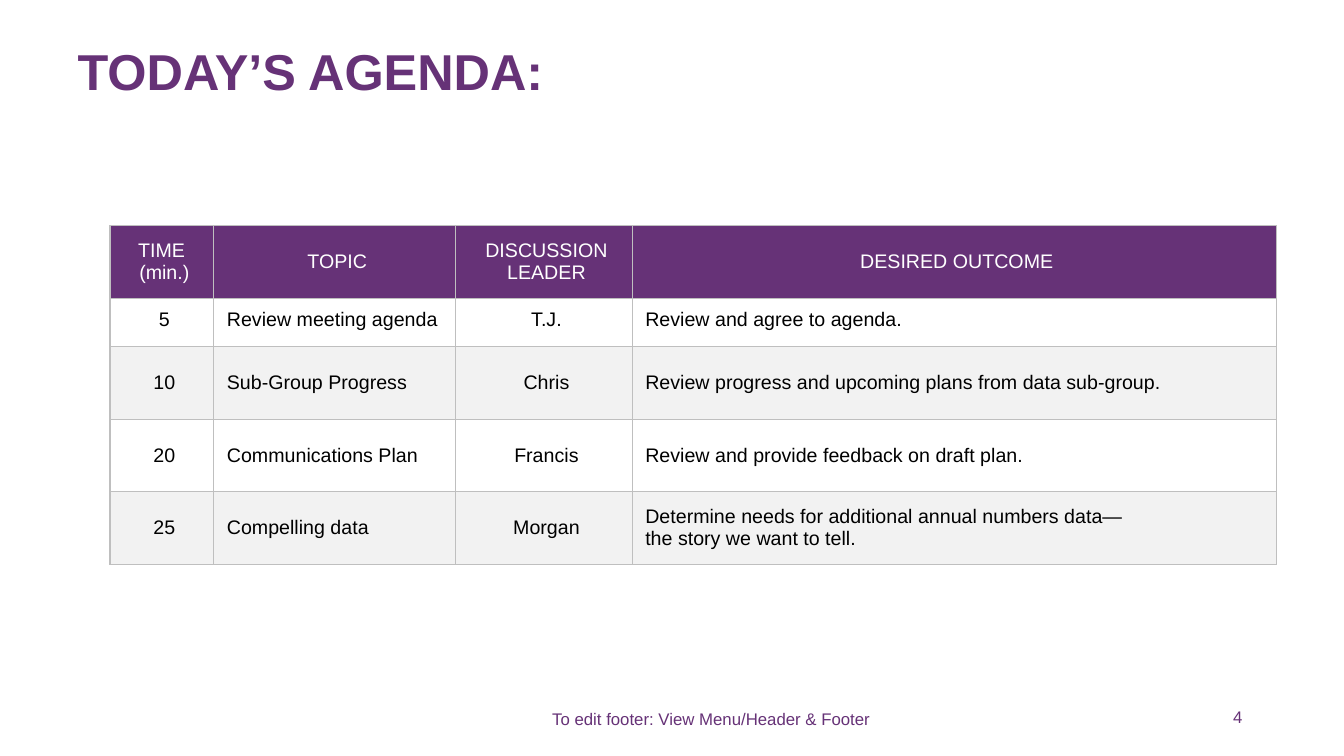
import pptx
import pptx.util
import pptx.dml.color
import pptx.enum.text
import pptx.oxml.ns
from dataclasses import dataclass
from lxml import etree

ALIGN = pptx.enum.text.PP_ALIGN
ANCHOR = pptx.enum.text.MSO_ANCHOR
qn = pptx.oxml.ns.qn


@dataclass(frozen=True)
class Theme:
    """Colours and type of the slide."""
    font: str = "Arial"
    purple: str = "663277"
    white: str = "FFFFFF"
    black: str = "000000"
    band: str = "F2F2F2"
    border: str = "BFBFBF"
    title_size: int = 36
    table_size: int = 14
    footer_size: int = 12


THEME = Theme()
COLUMN_WIDTHS = [103, 240, 175, 639]
ROW_HEIGHTS = [72, 48, 72, 72, 72]
AGENDA = [
    ["TIME \n(min.)", "TOPIC", "DISCUSSION\nLEADER", "DESIRED OUTCOME"],
    ["5", "Review meeting agenda", "T.J.", "Review and agree to agenda."],
    ["10", "Sub-Group Progress", "Chris",
     "Review progress and upcoming plans from data sub-group."],
    ["20", "Communications Plan", "Francis", "Review and provide feedback on draft plan."],
    ["25", "Compelling data", "Morgan",
     "Determine needs for additional annual numbers data—\vthe story we want to tell."],
]


def px(length):
    """Turn px, 100 to the inch, into EMU."""
    return pptx.util.Emu(length * 9144)


def color(value):
    """Return the colour object of a hex string."""
    return pptx.dml.color.RGBColor.from_string(value)


def write_text(frame, text, *, size, fill, align=ALIGN.LEFT, bold=False, line_spacing=None):
    """Write one paragraph per line of text, with one format."""
    frame.text = ""
    for index, line in enumerate(text.split("\n")):
        paragraph = frame.add_paragraph() if index else frame.paragraphs[0]
        paragraph.text = line
        paragraph.alignment = align
        paragraph.line_spacing = line_spacing
        for run in paragraph.runs:
            run.font.name = THEME.font
            run.font.size = pptx.util.Pt(size)
            run.font.bold = bold
            run.font.color.rgb = color(fill)
        for line_break in paragraph._p.findall(qn("a:br")):
            etree.SubElement(line_break, qn("a:rPr"), sz=str(size * 100))


def add_borders(cell):
    """Draw a thin line on each side of a cell."""
    properties = cell._tc.get_or_add_tcPr()
    for side in ("a:lnL", "a:lnR", "a:lnT", "a:lnB"):
        line = etree.SubElement(properties, qn(side), w=str(pptx.util.Pt(1)))
        solid = etree.SubElement(line, qn("a:solidFill"))
        etree.SubElement(solid, qn("a:srgbClr"), val=THEME.border)


def place_title(slide, text, left, top, width, height):
    """Move and fill the title placeholder."""
    title = slide.shapes.title
    title.left, title.top, title.width, title.height = map(px, (left, top, width, height))
    title.text_frame.vertical_anchor = ANCHOR.MIDDLE
    write_text(title.text_frame, text, size=THEME.title_size, fill=THEME.purple,
               bold=True, line_spacing=0.9)


def fill_cell(cell, text, row, column):
    """Format one agenda cell by its row and column."""
    header = row == 0
    cell.margin_left, cell.margin_top, cell.margin_right, cell.margin_bottom = map(
        px, (13, 10, 8, 10))
    cell.vertical_anchor = ANCHOR.TOP if row == 1 else ANCHOR.MIDDLE
    add_borders(cell)
    if header or row % 2 == 0:
        cell.fill.solid()
        cell.fill.fore_color.rgb = color(THEME.purple if header else THEME.band)
    else:
        cell.fill.background()
    centred = header or column in (0, 2)
    write_text(cell.text_frame, text, size=THEME.table_size,
               fill=THEME.white if header else THEME.black,
               align=ALIGN.CENTER if centred else ALIGN.LEFT)


def add_agenda(slide, left, top):
    """Add the agenda table with its corner at the given point."""
    table = slide.shapes.add_table(
        len(ROW_HEIGHTS), len(COLUMN_WIDTHS), px(left), px(top),
        px(sum(COLUMN_WIDTHS)), px(sum(ROW_HEIGHTS))).table
    table.horz_banding = False
    table.first_row = False
    for column, width in zip(table.columns, COLUMN_WIDTHS):
        column.width = px(width)
    for row, height in zip(table.rows, ROW_HEIGHTS):
        row.height = px(height)
    for row, texts in enumerate(AGENDA):
        for column, text in enumerate(texts):
            fill_cell(table.cell(row, column), text, row, column)


def add_footer(slide, text, left, top, width, height, align):
    """Add one footer text in the given box."""
    frame = slide.shapes.add_textbox(*map(px, (left, top, width, height))).text_frame
    frame.word_wrap = True
    frame.vertical_anchor = ANCHOR.MIDDLE
    write_text(frame, text, size=THEME.footer_size, fill=THEME.purple, align=align)


def main():
    """Build and save the agenda slide."""
    presentation = pptx.Presentation()
    presentation.slide_width, presentation.slide_height = px(1333), px(750)
    slide = presentation.slides.add_slide(presentation.slide_layouts[5])
    place_title(slide, "TODAY’S AGENDA:", 67, 24, 1135, 100)
    add_agenda(slide, 109, 224)
    add_footer(slide, "4", 1148, 699, 94, 25, ALIGN.RIGHT)
    add_footer(slide, "To edit footer: View Menu/Header & Footer", 323, 701, 765, 25,
               ALIGN.CENTER)
    presentation.save("out.pptx")


if __name__ == "__main__":
    main()
